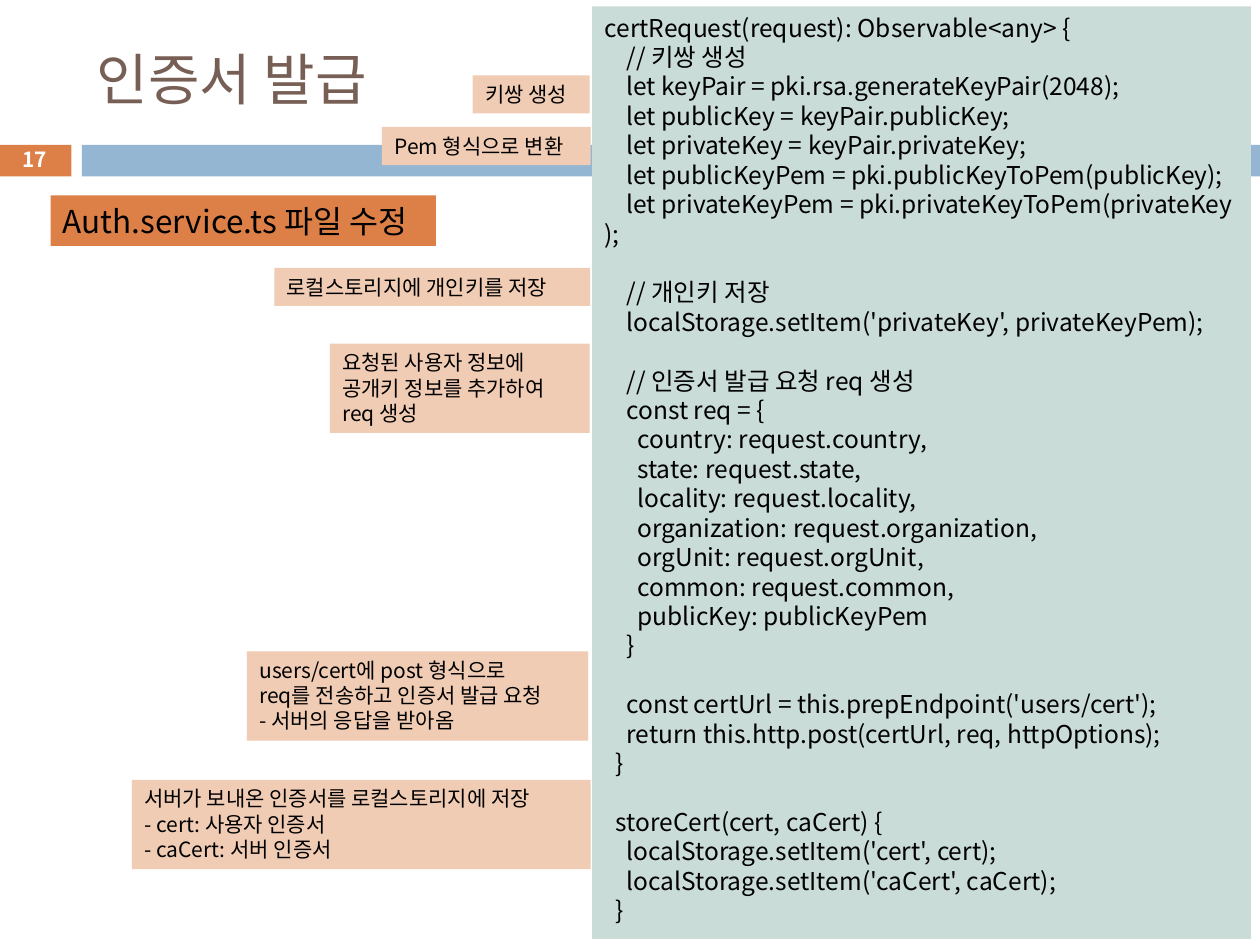
from dataclasses import dataclass

from lxml.etree import SubElement
from pptx import Presentation
from pptx.dml.color import RGBColor
from pptx.enum.shapes import MSO_SHAPE as SHAPE
from pptx.enum.text import MSO_ANCHOR as ANCHOR, PP_ALIGN as ALIGN
from pptx.oxml.ns import qn
from pptx.util import Cm, Pt

FONT = "Noto Sans CJK KR"
ORANGE, BLUE, PEACH, MINT = "DD8047", "94B6D2", "F1CCB5", "CADCD8"
BROWN, BLACK, WHITE = "775F55", "000000", "FFFFFF"
NBSP = chr(160)  # keeps each code line unbroken
LEADING = 1.2    # line pitch relative to the font size
SPACE_CM = 0.11  # indent for one leading space of code


@dataclass
class Box:
    left: float
    top: float
    width: float
    height: float


@dataclass
class Note:
    box: Box
    text: str


NOTES = [
    Note(Box(9.53, 1.52, 2.36, 0.77), "키쌍 생성"),
    Note(Box(5.53, 5.4, 6.37, 0.77), "로컬스토리지에 개인키를 저장"),
    Note(Box(6.65, 6.93, 5.24, 1.8),
         "요청된 사용자 정보에\n공개키 정보를 추가하여\nreq 생성"),
    Note(Box(7.7, 2.56, 4.21, 0.77), "Pem 형식으로 변환"),
    Note(Box(4.98, 13.13, 6.88, 1.8),
         "users/cert에 post 형식으로\nreq를 전송하고 인증서 발급 요청\n- 서버의 응답을 받아옴"),
    Note(Box(2.66, 15.72, 9.25, 1.8),
         "서버가 보내온 인증서를 로컬스토리지에 저장\n- cert: 사용자 인증서\n- caCert: 서버 인증서"),
]

# Code blocks, separated by one line of space
CODE_BLOCKS = [
    """certRequest(request): Observable<any> {
    // 키쌍 생성
    let keyPair = pki.rsa.generateKeyPair(2048);
    let publicKey = keyPair.publicKey;
    let privateKey = keyPair.privateKey;
    let publicKeyPem = pki.publicKeyToPem(publicKey);
    let privateKeyPem = pki.privateKeyToPem(privateKey);""",
    """    // 개인키 저장
    localStorage.setItem('privateKey', privateKeyPem);""",
    """    // 인증서 발급 요청 req 생성
    const req = {
      country: request.country,
      state: request.state,
      locality: request.locality,
      organization: request.organization,
      orgUnit: request.orgUnit,
      common: request.common,
      publicKey: publicKeyPem
    }""",
    """    const certUrl = this.prepEndpoint('users/cert');
    return this.http.post(certUrl, req, httpOptions);
  }""",
    """  storeCert(cert, caCert) {
    localStorage.setItem('cert', cert);
    localStorage.setItem('caCert', caCert);
  }""",
]


def rgb(color: str) -> RGBColor:
    return RGBColor.from_string(color)


def add_rect(s, box: Box, fill: str):
    sp = s.shapes.add_shape(SHAPE.RECTANGLE, Cm(box.left), Cm(box.top),
                            Cm(box.width), Cm(box.height))
    sp.shadow.inherit = False
    sp.fill.solid()
    sp.fill.fore_color.rgb = rgb(fill)
    sp.line.fill.background()
    return sp


def add_textbox(s, box: Box):
    return s.shapes.add_textbox(Cm(box.left), Cm(box.top),
                                Cm(box.width), Cm(box.height))


def write(sp, text: str, *, size: float, color: str = BLACK, bold: bool = False,
          align=ALIGN.LEFT, anchor=ANCHOR.TOP, code: bool = False) -> None:
    """One paragraph per line; blank lines become space before the next one."""
    tf = sp.text_frame
    tf.word_wrap = True
    tf.vertical_anchor = anchor
    p, gap = tf.paragraphs[0], 0
    for i, line in enumerate(text.split("\n")):
        if not line:
            gap += size * LEADING
            continue
        if i:
            p = tf.add_paragraph()
        p.alignment = align
        p.line_spacing = Pt(size * LEADING)
        p.space_before, gap = Pt(gap), 0
        body = line.lstrip()
        if code:
            indent = Cm(SPACE_CM * (len(line) - len(body)))
            p._p.get_or_add_pPr().set("indent", str(int(indent)))
            body = body.replace(" ", NBSP)
        r = p.add_run()
        r.text = body
        f = r.font
        f.name, f.size, f.bold = FONT, Pt(size), bold
        f.color.rgb = rgb(color)
        SubElement(r._r.get_or_add_rPr(), qn("a:ea")).set("typeface", FONT)


def main() -> None:
    prs = Presentation()
    prs.slide_width, prs.slide_height = Cm(25.4), Cm(19.05)
    s = prs.slides.add_slide(prs.slide_layouts[6])

    # Header band, title and page number
    add_rect(s, Box(-0.03, 2.92, 1.47, 0.64), ORANGE)
    add_rect(s, Box(1.65, 2.92, 23.75, 0.64), BLUE)
    write(add_textbox(s, Box(1.7, 0.64, 22.66, 1.88)), "인증서 발급",
          size=32, color=BROWN, anchor=ANCHOR.MIDDLE)
    write(add_textbox(s, Box(-0.03, 2.87, 1.47, 0.69)), "17", size=11.9,
          color=WHITE, bold=True, align=ALIGN.CENTER, anchor=ANCHOR.MIDDLE)

    # Notes beside the code
    for note in NOTES:
        write(add_rect(s, note.box, PEACH), note.text, size=12)

    # File name and code panel
    write(add_rect(s, Box(1.02, 3.94, 7.77, 1.02), ORANGE),
          "Auth.service.ts 파일 수정", size=18)
    write(add_rect(s, Box(11.94, 0.13, 13.28, 18.8), MINT),
          "\n\n".join(CODE_BLOCKS), size=14, code=True)

    prs.save("out.pptx")


if __name__ == "__main__":
    main()
